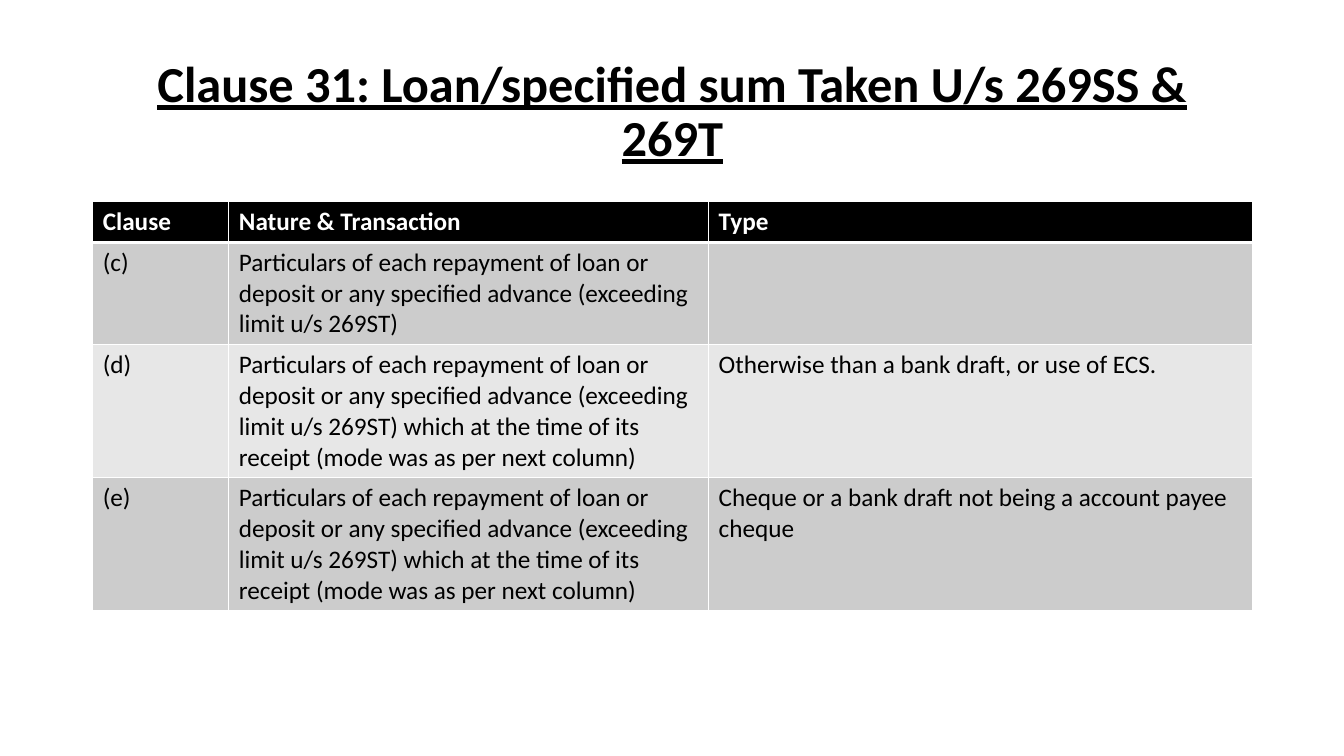
import pptx
import pptx.dml.color
import pptx.enum.text
import pptx.oxml
import pptx.oxml.ns
import pptx.util

COLOURS = {"black": "000000", "white": "FFFFFF", "dark band": "CCCCCC", "light band": "E7E7E7"}
REPAYMENT = ("Particulars of each repayment of loan or deposit or any specified advance "
             "(exceeding limit u/s 269ST)")
MODE = " which at the time of its receipt (mode was as per next column)"
CLAUSES = [
    ("Clause", "Nature & Transaction", "Type"),
    ("(c)", REPAYMENT, ""),
    ("(d)", REPAYMENT + MODE, "Otherwise than a bank draft, or use of ECS."),
    ("(e)", REPAYMENT + MODE, "Cheque or a bank draft not being a account payee cheque"),
]
LINES_PER_ROW = [1, 3, 4, 4]


class ClausePage:
    """Draws styled elements on one slide, placed on a grid of 100 columns by 100 rows."""

    font = "Calibri"

    def __init__(self, deck):
        self.deck = deck
        self.page = deck.slides.add_slide(deck.slide_layouts[6])

    def across(self, columns):
        return round(self.deck.slide_width * columns / 100)

    def down(self, rows):
        return round(self.deck.slide_height * rows / 100)

    def colour(self, name):
        return pptx.dml.color.RGBColor.from_string(COLOURS[name])

    def span(self, para, text, size, colour, bold, underline=None):
        span = para.add_run()
        span.text = text
        span.font.name = self.font
        span.font.size = pptx.util.Pt(size)
        span.font.bold = bold
        span.font.underline = underline
        span.font.color.rgb = self.colour(colour)

    def title(self, text, left, top, width, height):
        box = self.page.shapes.add_textbox(
            self.across(left), self.down(top), self.across(width), self.down(height))
        frame = box.text_frame
        frame.word_wrap = True
        frame.vertical_anchor = pptx.enum.text.MSO_ANCHOR.MIDDLE
        para = frame.paragraphs[0]
        para.alignment = pptx.enum.text.PP_ALIGN.CENTER
        para.line_spacing = 0.9
        self.span(para, text, 36, "black", True, True)

    def borders(self, cell, widths):
        properties = cell._tc.get_or_add_tcPr()
        for side, points in zip("LRTB", widths):
            properties.append(pptx.oxml.parse_xml(
                f'<a:ln{side} {pptx.oxml.ns.nsdecls("a")} w="{pptx.util.Pt(points)}">'
                f'<a:solidFill><a:srgbClr val="{COLOURS["white"]}"/></a:solidFill></a:ln{side}>'))

    def cell(self, cell, text, row):
        header = row == 0
        fill = "black" if header else "dark band" if row % 2 else "light band"
        self.borders(cell, (1, 1, 3 if row == 1 else 1, 3 if header else 1))
        cell.fill.solid()
        cell.fill.fore_color.rgb = self.colour(fill)
        if text:
            self.span(cell.text_frame.paragraphs[0], text, 18,
                      "white" if header else "black", header)

    def table(self, records, left, top, widths, heights):
        table = self.page.shapes.add_table(
            len(records), len(widths), self.across(left), self.down(top),
            self.across(sum(widths)), self.down(sum(heights))).table
        for column, width in zip(table.columns, widths):
            column.width = self.across(width)
        for row, (record, height) in enumerate(zip(records, heights)):
            table.rows[row].height = self.down(height)
            for column, text in enumerate(record):
                self.cell(table.cell(row, column), text, row)


def main():
    deck = pptx.Presentation()
    deck.slide_width = pptx.util.Inches(13.33)
    deck.slide_height = pptx.util.Inches(7.5)
    page = ClausePage(deck)
    page.title("Clause 31: Loan/specified sum Taken U/s 269SS & 269T", 6.9, 5.33, 86.27, 19.33)
    page.table(CLAUSES, 6.9, 26.67, (10.13, 35.7, 40.5),
               [1.33 + 4.07 * lines for lines in LINES_PER_ROW])
    deck.save("out.pptx")


if __name__ == "__main__":
    main()
